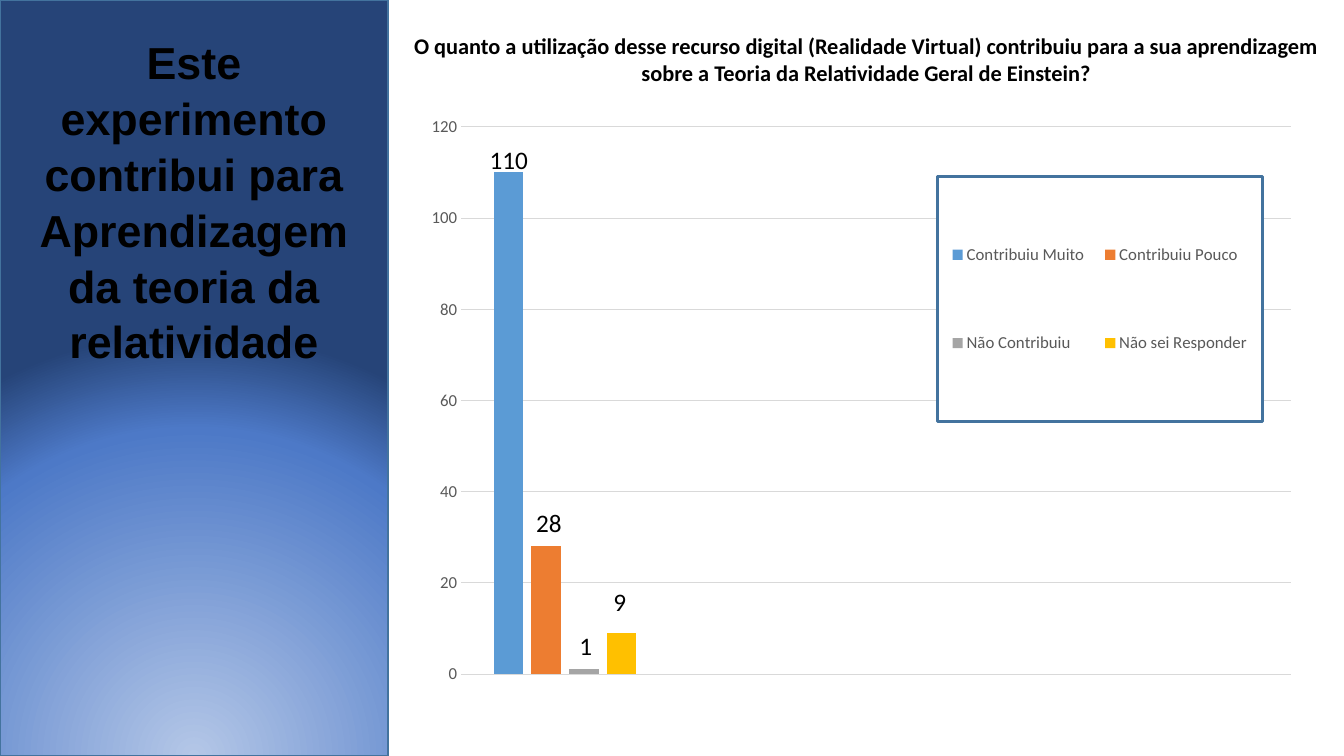
from lxml.etree import SubElement
from pptx import Presentation
from pptx.chart.data import CategoryChartData
from pptx.dml.color import RGBColor
from pptx.enum.chart import XL_CHART_TYPE, XL_LEGEND_POSITION, XL_TICK_MARK
from pptx.enum.shapes import MSO_SHAPE
from pptx.enum.text import MSO_ANCHOR, PP_ALIGN
from pptx.oxml import parse_xml
from pptx.oxml.ns import nsdecls, qn
from pptx.util import Cm, Pt

SERIES = [
    ("Contribuiu Muito", 110, "5B9BD5"),
    ("Contribuiu Pouco", 28, "ED7D31"),
    ("Não Contribuiu", 1, "A5A5A5"),
    ("Não sei Responder", 9, "FFC000"),
]
LABELS = [
    ("110", 12.09, 3.51, 1.5),
    ("28", 13.26, 12.67, 1.17),
    ("1", 14.35, 15.77, 0.84),
    ("9", 15.21, 14.66, 0.84),
]
STOPS = [(0, "B4C7E7"), (77, "4D79C7"), (100, "264478")]
EDGE = "43739E"


def color(code):
    """Turn a hex string into a colour."""
    return RGBColor.from_string(code)


def style(font, name, size, code, bold=False):
    """Set the look of a font."""
    font.name, font.size, font.bold = name, Pt(size), bold
    font.color.rgb = color(code)


def write(shape, text, name, size, bold=False, align=PP_ALIGN.LEFT, wrap=True):
    """Fill a shape with one paragraph."""
    frame = shape.text_frame
    frame.text = text
    frame.word_wrap = wrap
    frame.vertical_anchor = MSO_ANCHOR.TOP
    para = frame.paragraphs[0]
    para.alignment = align
    style(para.runs[0].font, name, size, "000000", bold)


def add_text(slide, box, text, size, **look):
    """Add a text box."""
    shape = slide.shapes.add_textbox(*map(Cm, box))
    write(shape, text, "Calibri", size, **look)


def add_panel(slide):
    """Add the side panel with a round gradient."""
    panel = slide.shapes.add_shape(MSO_SHAPE.RECTANGLE, 0, 0, Cm(9.78), Cm(19.05))
    panel.shadow.inherit = False
    panel.line.color.rgb = color(EDGE)
    panel.line.width = Pt(1)
    stops = "".join(
        f'<a:gs pos="{pos * 1000}"><a:srgbClr val="{code}"/></a:gs>'
        for pos, code in STOPS
    )
    fill = parse_xml(
        f'<a:gradFill {nsdecls("a")} rotWithShape="1"><a:gsLst>{stops}</a:gsLst>'
        '<a:path path="circle"><a:fillToRect l="50000" t="130000" r="50000" '
        'b="-30000"/></a:path></a:gradFill>'
    )
    panel.element.spPr.find(qn("a:prstGeom")).addnext(fill)
    return panel


def add_title(slide, panel, text):
    """Place the title over the panel."""
    title = slide.shapes.title
    title.left, title.top, title.width, title.height = map(Cm, (0, 0.69, 9.78, 8.46))
    write(title, text, "Arial", 32, bold=True, align=PP_ALIGN.CENTER)
    title.text_frame.paragraphs[0].line_spacing = 1.04
    panel.element.addnext(title.element)


def place(parent, index, box, inner=False):
    """Give a chart part a fixed layout."""
    for old in parent.findall(qn("c:layout")):
        parent.remove(old)
    layout = parse_xml(f'<c:layout {nsdecls("c")}/>')
    manual = SubElement(layout, qn("c:manualLayout"))
    items = [("layoutTarget", "inner")] if inner else []
    items += [("xMode", "edge"), ("yMode", "edge"), *zip("xywh", box)]
    for tag, val in items:
        SubElement(manual, qn(f"c:{tag}")).set("val", str(val))
    parent.insert(index, layout)


def add_legend(chart):
    """Add the framed legend."""
    chart.has_legend = True
    legend = chart.legend
    legend.position = XL_LEGEND_POSITION.BOTTOM
    legend.include_in_layout = False
    style(legend.font, "Calibri", 12, "595959")
    node = legend._element
    place(node, 1, (0.58, 0.117, 0.363, 0.396))
    frame = parse_xml(
        f'<c:spPr {nsdecls("c", "a")}><a:solidFill><a:srgbClr val="FFFFFF"/>'
        f'</a:solidFill><a:ln w="{Pt(2)}"><a:solidFill><a:srgbClr val="{EDGE}"/>'
        "</a:solidFill></a:ln></c:spPr>"
    )
    node.find(qn("c:overlay")).addnext(frame)


def add_bars(slide):
    """Add the column chart."""
    data = CategoryChartData()
    data.categories = ["1", "", "", ""]
    for name, val, _ in SERIES:
        data.add_series(name, [val, None, None, None])
    box = map(Cm, (10.54, 2.62, 22.56, 15.6))
    chart = slide.shapes.add_chart(XL_CHART_TYPE.COLUMN_CLUSTERED, *box, data).chart
    chart.has_title = False
    style(chart.font, "Calibri", 10, "000000")
    plot = chart.plots[0]
    plot.gap_width, plot.overlap, plot.vary_by_categories = 219, -27, False
    for bar, (_, _, code) in zip(plot.series, SERIES):
        bar.format.fill.solid()
        bar.format.fill.fore_color.rgb = color(code)
    chart.category_axis.visible = False
    axis = chart.value_axis
    axis.minimum_scale, axis.maximum_scale, axis.major_unit = 0, 120, 20
    axis.major_tick_mark = XL_TICK_MARK.NONE
    axis.format.line.fill.background()
    style(axis.tick_labels.font, "Calibri", 12, "595959")
    grid = axis.major_gridlines.format.line
    grid.color.rgb, grid.width = color("D9D9D9"), Pt(0.75)
    area = chart._chartSpace.find(f".//{qn('c:plotArea')}")
    place(area, 0, (0.048, 0.037, 0.927, 0.884), inner=True)
    add_legend(chart)


def main():
    """Build the slide."""
    deck = Presentation()
    deck.slide_width, deck.slide_height = Cm(33.87), Cm(19.05)
    slide = deck.slides.add_slide(deck.slide_layouts[5])
    add_bars(slide)
    panel = add_panel(slide)
    add_title(
        slide, panel,
        "Este experimento contribui para Aprendizagem da teoria da relatividade",
    )
    add_text(
        slide, (9.78, 0.69, 24.1, 1.63),
        "O quanto a utilização desse recurso digital (Realidade Virtual) contribuiu "
        "para a sua aprendizagem sobre a Teoria da Relatividade Geral de Einstein?",
        16, bold=True, align=PP_ALIGN.CENTER,
    )
    for text, left, top, width in LABELS:
        add_text(slide, (left, top, width, 1.02), text, 18, wrap=False)
    deck.save("out.pptx")


if __name__ == "__main__":
    main()
